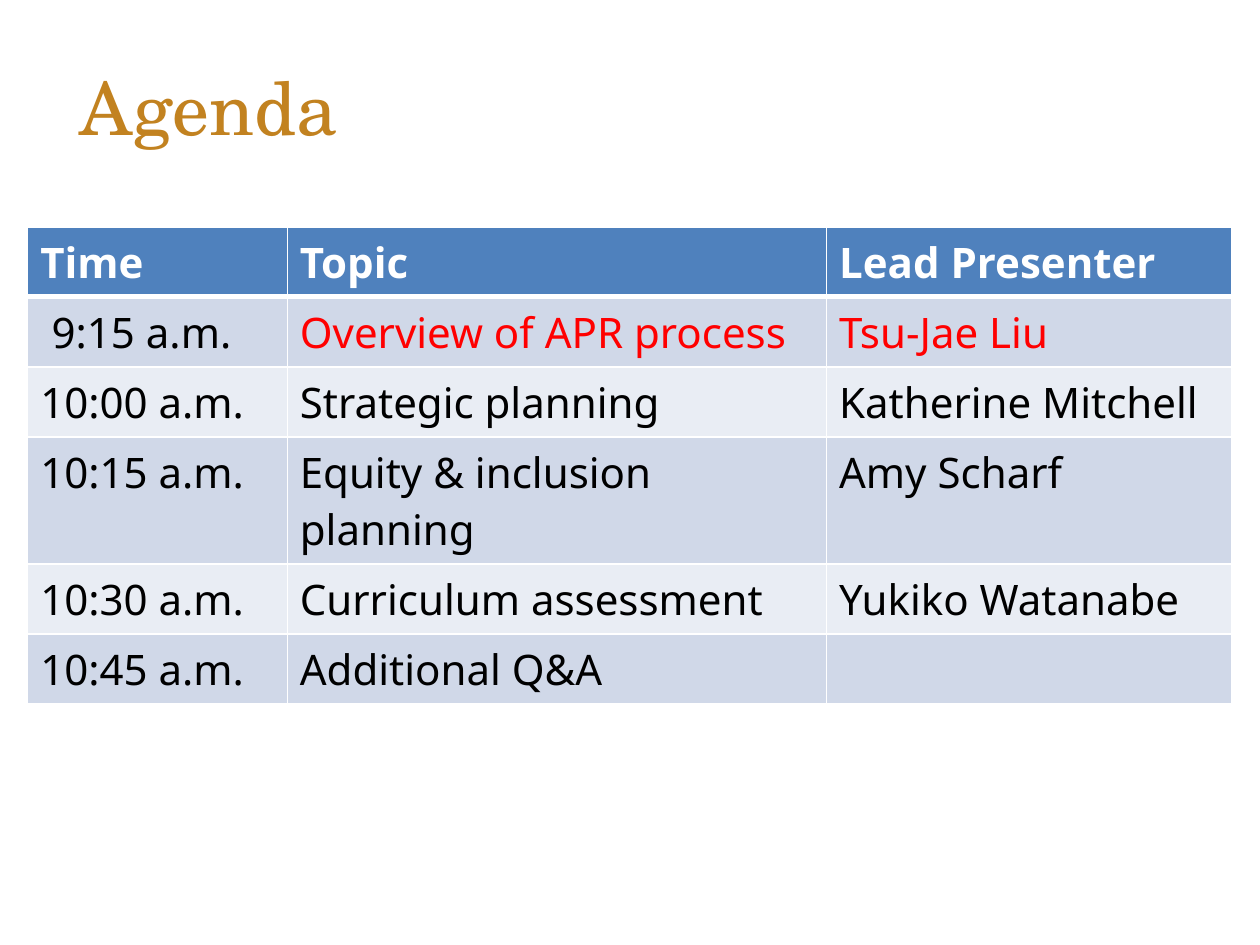
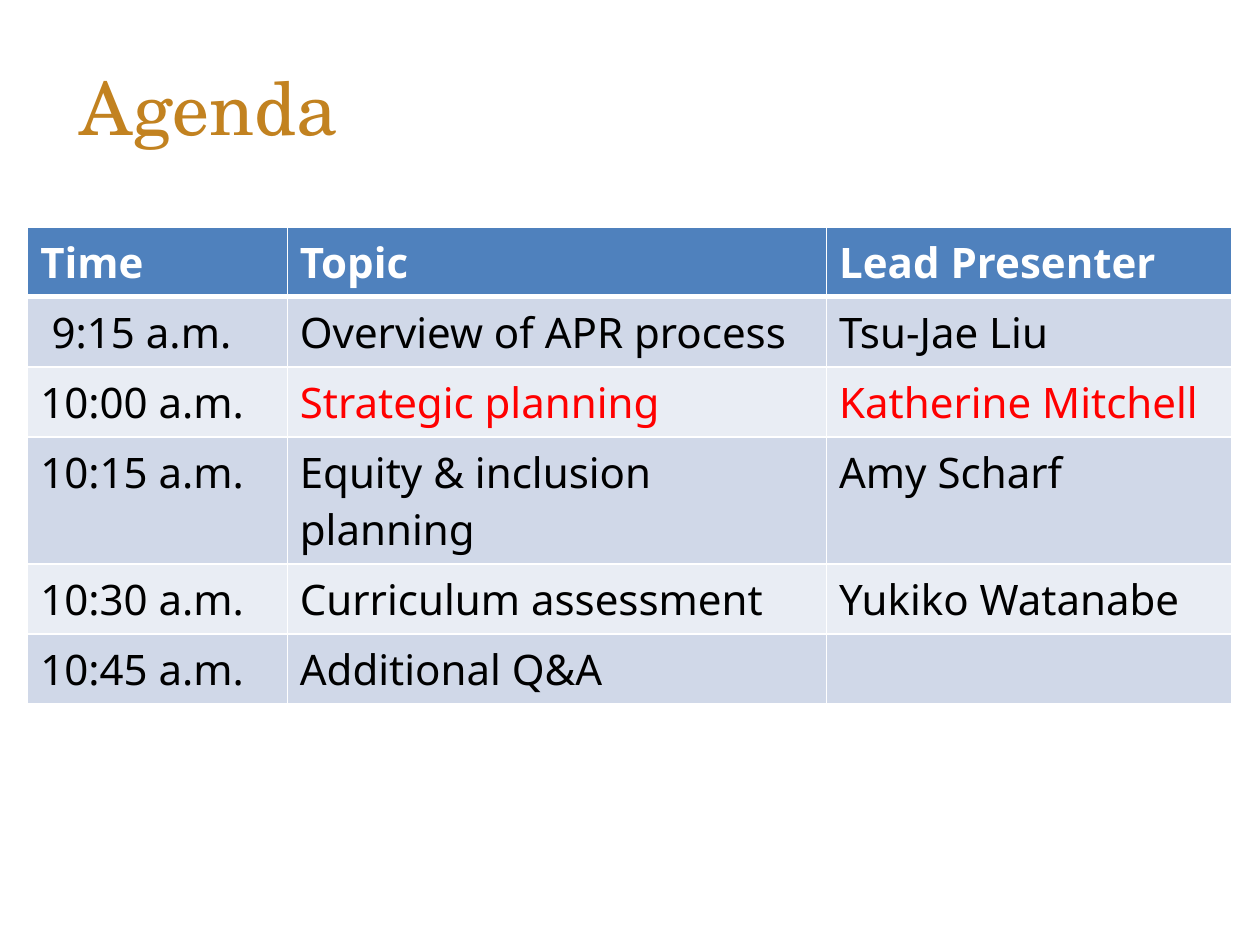
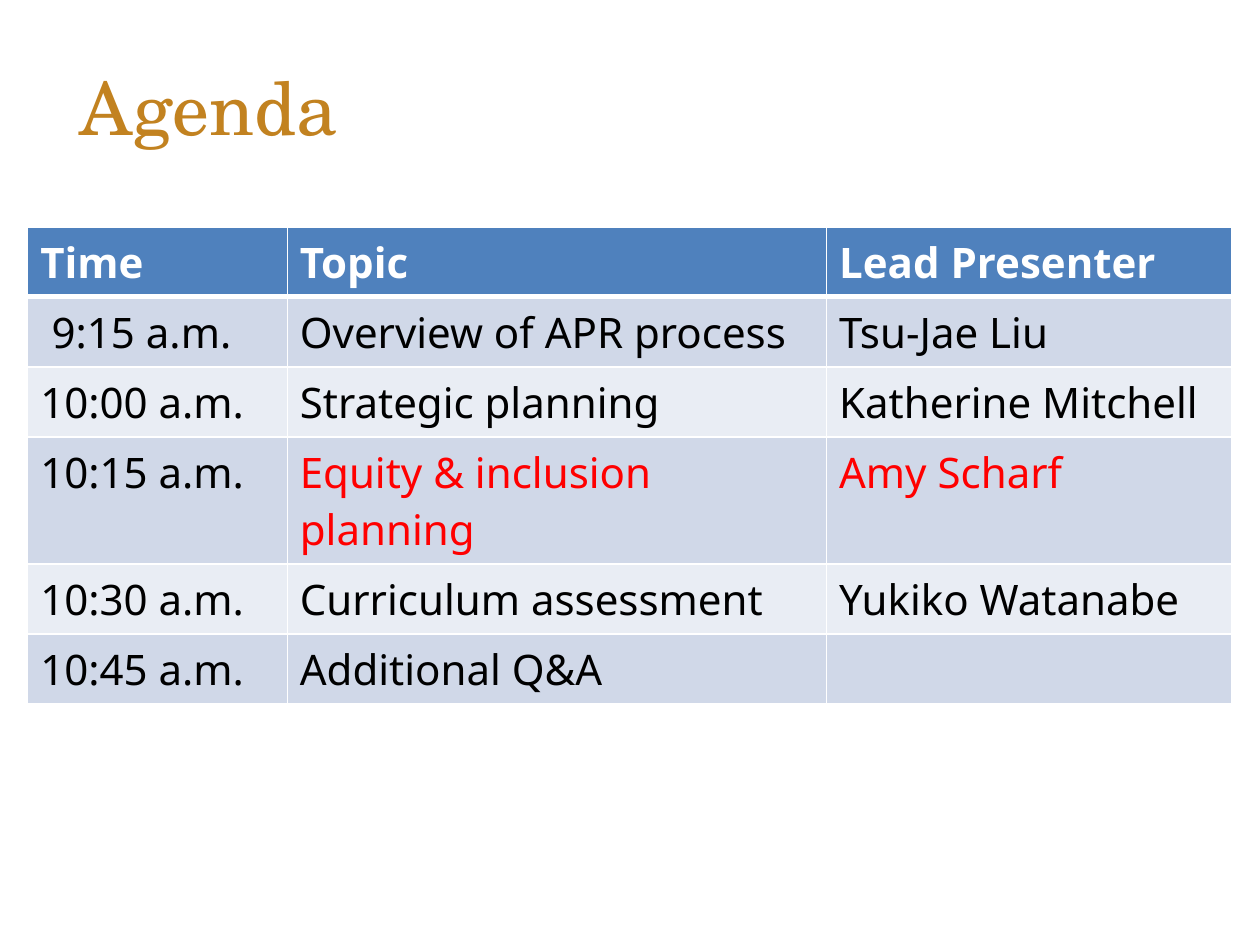
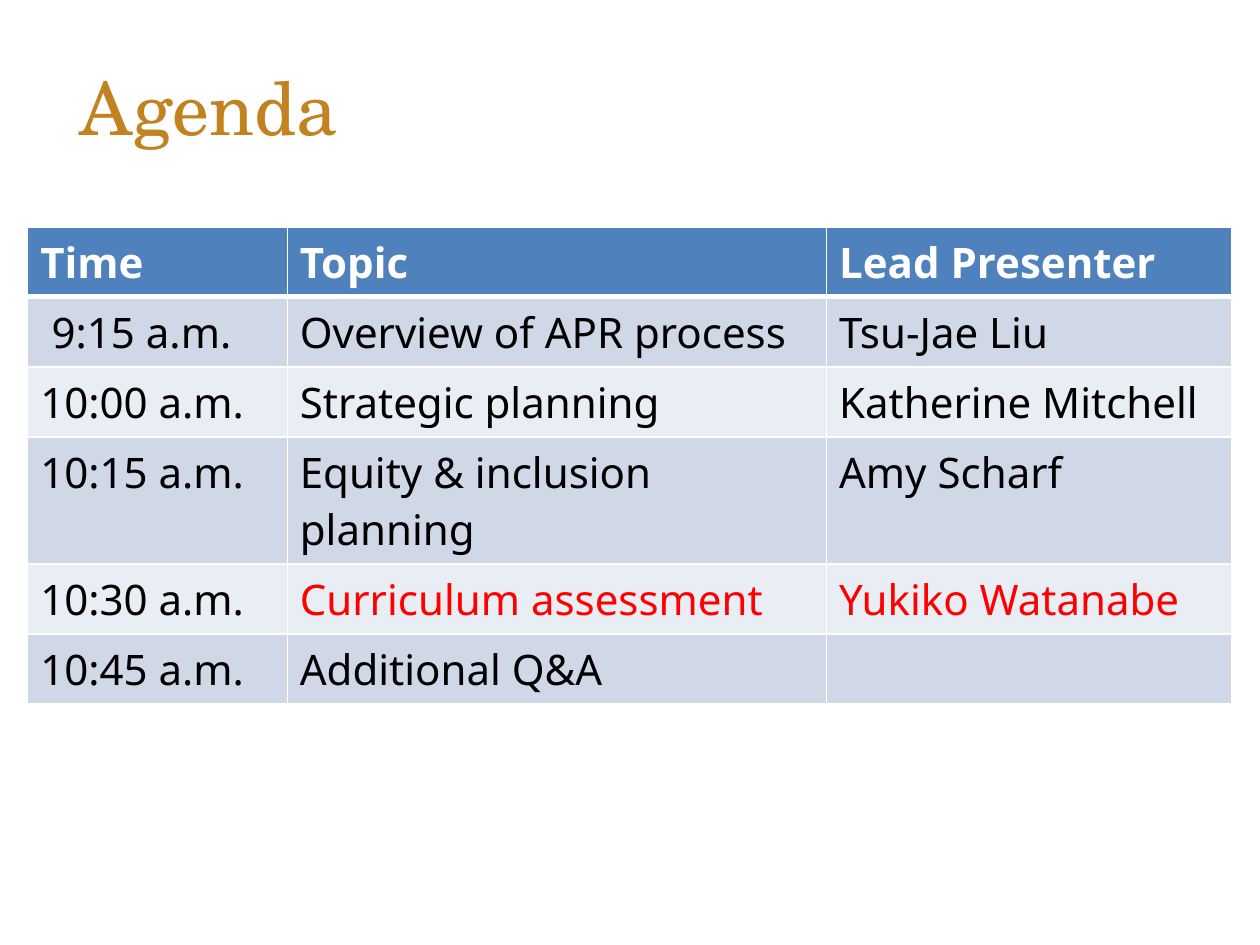
from dataclasses import dataclass

from lxml import etree
from pptx import Presentation
from pptx.dml.color import RGBColor
from pptx.enum.text import MSO_ANCHOR, PP_ALIGN
from pptx.oxml.ns import qn
from pptx.util import Inches, Pt

MIDDLE = MSO_ANCHOR.MIDDLE
LEFT = PP_ALIGN.LEFT
TITLE_ONLY = 5

TITLE = "Agenda"
HEADS = ("Time", "Topic", "Lead Presenter")
ITEMS = [
    ("9:15 a.m.", "Overview of APR process", "Tsu-Jae Liu"),
    ("10:00 a.m.", "Strategic planning", "Katherine Mitchell"),
    ("10:15 a.m.", "Equity & inclusion planning", "Amy Scharf"),
    ("10:30 a.m.", "Curriculum assessment", "Yukiko Watanabe"),
    ("10:45 a.m.", "Additional Q&A", ""),
]
ACTIVE = (1, 2, 3, 4)

TITLE_BOX = (0.53, 0.21, 8.47, 1.26)
GRID_LEFT, GRID_TOP = 0.22, 1.8
COLS = (2.06, 4.28, 3.22)
ROW = 0.41
PAD, DIGIT_PAD = 0.1, 0.19


@dataclass(frozen=True)
class Theme:
    gold: str = "C28220"
    head: str = "4F81BD"
    bands: tuple = ("E9EDF4", "D0D8E8")
    white: str = "FFFFFF"
    black: str = "000000"
    red: str = "FF0000"
    serif: str = "TeX Gyre Schola"
    sans: str = "Noto Sans"
    title: int = 42
    body: int = 24
    thin: int = 1
    thick: int = 3


THEME = Theme()


def write(frame, text, font=THEME.sans, size=THEME.body, color=THEME.black, bold=False):
    para = frame.paragraphs[0]
    para.alignment = LEFT
    if not text:
        return
    run = para.add_run()
    run.text = text
    run.font.name = font
    run.font.size = Pt(size)
    run.font.bold = bold
    run.font.color.rgb = RGBColor.from_string(color)


def add_edges(cell, row):
    props = cell._tc.get_or_add_tcPr()
    heavy = {0: "lnB", 1: "lnT"}.get(row)
    for side in ("lnL", "lnR", "lnT", "lnB"):
        width = THEME.thick if side == heavy else THEME.thin
        line = etree.SubElement(props, qn(f"a:{side}"), w=str(Pt(width)))
        fill = etree.SubElement(line, qn("a:solidFill"))
        etree.SubElement(fill, qn("a:srgbClr"), val=THEME.white)


def add_title(slide):
    title = slide.shapes.title
    title.left, title.top, title.width, title.height = map(Inches, TITLE_BOX)
    title.text_frame.vertical_anchor = MIDDLE
    write(title.text_frame, TITLE, font=THEME.serif, size=THEME.title, color=THEME.gold)


def add_agenda(slide, active):
    rows = [HEADS, *ITEMS]
    table = slide.shapes.add_table(
        len(rows), len(COLS), Inches(GRID_LEFT), Inches(GRID_TOP),
        Inches(sum(COLS)), Inches(ROW * len(rows))).table
    for col, width in zip(table.columns, COLS):
        col.width = Inches(width)
    for r, texts in enumerate(rows):
        table.rows[r].height = Inches(ROW)
        for c, text in enumerate(texts):
            cell = table.cell(r, c)
            add_edges(cell, r)
            cell.fill.solid()
            shade = THEME.bands[r % 2] if r else THEME.head
            cell.fill.fore_color.rgb = RGBColor.from_string(shade)
            short = c == 0 and text.find(":") == 1
            cell.margin_left = Inches(DIGIT_PAD if short else PAD)
            color = THEME.red if r == active and c else THEME.black
            write(cell.text_frame, text, color=color if r else THEME.white, bold=r == 0)


def main():
    deck = Presentation()
    deck.slide_width, deck.slide_height = Inches(10), Inches(7.5)
    for active in ACTIVE:
        slide = deck.slides.add_slide(deck.slide_layouts[TITLE_ONLY])
        add_title(slide)
        add_agenda(slide, active)
    deck.save("out.pptx")


if __name__ == "__main__":
    main()
